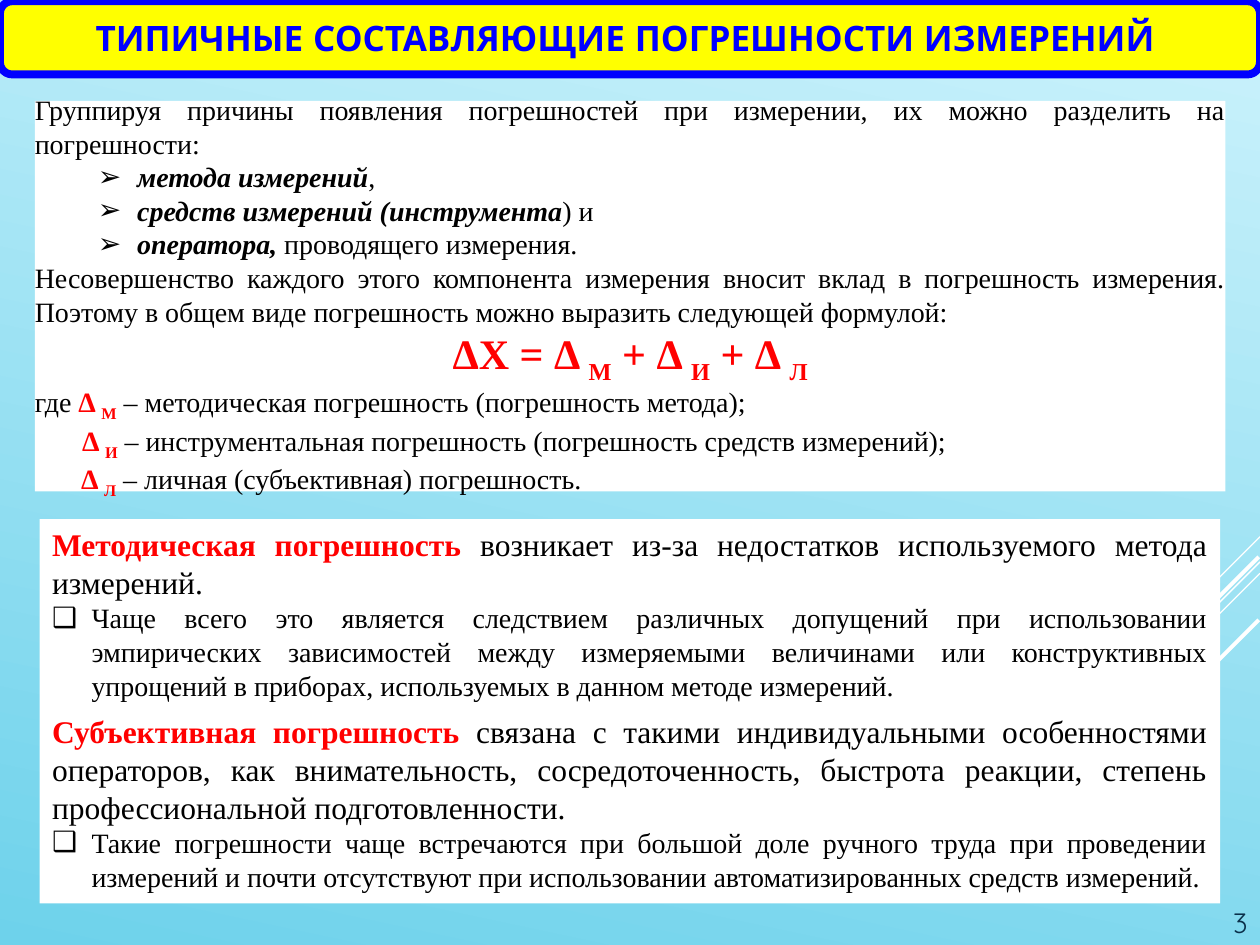
"""Build the slide on the typical components of measurement error."""
from dataclasses import dataclass

from lxml.etree import SubElement
from pptx import Presentation
from pptx.dml.color import RGBColor as RGB
from pptx.enum.shapes import MSO_CONNECTOR as Connector, MSO_SHAPE as Shape
from pptx.enum.text import MSO_ANCHOR as Anchor, MSO_AUTO_SIZE as AutoSize, PP_ALIGN as Align
from pptx.oxml.ns import qn
from pptx.util import Pt


@dataclass(frozen=True)
class Theme:
    head: str = "Quicksand"
    body: str = "Times New Roman"
    black: str = "000000"
    white: str = "FFFFFF"
    red: str = "FF0000"
    blue: str = "0000FF"
    yellow: str = "FFFF00"
    navy: str = "0A304A"
    sky: tuple = ("C8F1FB", "6ED2EB")
    title: int = 20
    formula: int = 24
    lead: int = 18
    text: int = 16


T = Theme()


def add_run(p, text, size=T.text, color=T.black, font=T.body, bold=False, italic=False, sub=False):
    r = p.add_run()
    r.text = text
    r.font.name, r.font.size = font, Pt(size)
    r.font.bold, r.font.italic = bold, italic
    r.font.color.rgb = RGB.from_string(color)
    if sub:
        r._r.get_or_add_rPr().set("baseline", "-25000")


def add_par(tf, runs, align=Align.JUSTIFY, left=0, indent=0, bullet=None, before=0):
    p = tf.paragraphs[0] if not tf.paragraphs[0].runs else tf.add_paragraph()
    p.alignment, p.space_before = align, Pt(before)
    pPr = p._p.get_or_add_pPr()
    pPr.set("marL", str(Pt(left)))
    pPr.set("indent", str(Pt(indent)))
    if bullet:
        SubElement(pPr, qn("a:buChar")).set("char", bullet)
    else:
        SubElement(pPr, qn("a:buNone"))
    for text, style in runs:
        add_run(p, text, **style)


prs = Presentation()
prs.slide_width, prs.slide_height = Pt(720), Pt(540)
s = prs.slides.add_slide(prs.slide_layouts[3])
title, causes, kinds = s.placeholders

fill = s.background.fill
fill.gradient()
fill.gradient_angle = 258
for stop, color, position in zip(fill.gradient_stops, T.sky, (0.04, 1)):
    stop.color.rgb, stop.position = RGB.from_string(color), position

rays = [(720, 306.7, 59.8, 0.75), (720, 321.1, 194.4, 0.75), (720, 327.6, 123.8, 0.75),
        (719.3, 318.2, 113, 2.25), (719.3, 354.2, 82.1, 2.25)]
for i, (x, y, run, width) in enumerate(rays):
    ray = s.shapes.add_connector(Connector.STRAIGHT, Pt(x), Pt(y), Pt(x - run), Pt(y + run))
    ray.line.color.rgb, ray.line.width = RGB.from_string(T.white), Pt(width)
    SubElement(ray._element.spPr, qn("a:effectLst"))
    s.shapes.element.insert(2 + i, ray._element)

title_box = (0, 0.7, 720, 41.8)
banner = s.shapes.add_shape(Shape.ROUNDED_RECTANGLE, *map(Pt, title_box))
banner.shadow.inherit = False
banner.fill.solid()
banner.fill.fore_color.rgb = RGB.from_string(T.yellow)
banner.line.color.rgb, banner.line.width = RGB.from_string(T.blue), Pt(4.5)
s.shapes.element.insert(2 + len(rays), banner._element)

boxes = [(title, title_box, None, Anchor.MIDDLE),
         (causes, (19.9, 57.6, 680.4, 223.2), T.white, Anchor.MIDDLE),
         (kinds, (22.6, 296.6, 674.6, 219.6), T.white, Anchor.TOP)]
for sp, box, color, anchor in boxes:
    sp.left, sp.top, sp.width, sp.height = map(Pt, box)
    if color:
        sp.fill.solid()
        sp.fill.fore_color.rgb = RGB.from_string(color)
    tf = sp.text_frame
    tf.word_wrap, tf.auto_size, tf.vertical_anchor = True, AutoSize.NONE, anchor

p = title.text_frame.paragraphs[0]
p.alignment = Align.CENTER
add_run(p, "ТИПИЧНЫЕ СОСТАВЛЯЮЩИЕ ПОГРЕШНОСТИ ИЗМЕРЕНИЙ ", T.title, T.blue, T.head, bold=True)

plain, strong = {}, {"bold": True, "italic": True}
symbol = {"color": T.red, "bold": True}
index = symbol | {"sub": True}
big, big_index = symbol | {"size": T.formula}, index | {"size": T.formula}
lead, lead_term = {"size": T.lead}, symbol | {"size": T.lead}

tf = causes.text_frame
tf.margin_left = tf.margin_top = tf.margin_right = tf.margin_bottom = 0
add_par(tf, [("Группируя причины появления погрешностей при измерении, их можно разделить на погрешности:", plain)])
for term, rest in [("метода измерений", ", "), ("средств измерений (инструмента", ") и "),
                   ("оператора,", " проводящего измерения. ")]:
    add_par(tf, [(term, strong), (rest, plain)], left=58.5, indent=-22.5, bullet="➢")
add_par(tf, [("Несовершенство каждого этого компонента измерения вносит вклад в погрешность измерения. "
              "Поэтому в общем виде погрешность можно выразить следующей формулой:", plain)])
add_par(tf, [("ΔX = Δ ", big), ("M", big_index), (" + Δ ", big), ("И", big_index),
             (" + Δ ", big), ("Л", big_index)], Align.CENTER)
for intro, letter, meaning, indent in [
        ("где ", "M", "методическая погрешность (погрешность метода);", 0),
        ("", "И", "инструментальная погрешность (погрешность средств измерений);", 27),
        ("", "Л", "личная (субъективная) погрешность.", 26.5)]:
    start = [(intro, plain)] if intro else []
    add_par(tf, start + [("Δ ", symbol), (letter, index), (f" – {meaning}", plain)],
            Align.LEFT, indent=indent)

for term, rest, detail, before in [
        ("Методическая погрешность ", "возникает из-за недостатков используемого метода измерений. ",
         "Чаще всего это является следствием различных допущений при использовании эмпирических "
         "зависимостей между измеряемыми величинами или конструктивных упрощений в приборах, "
         "используемых в данном методе измерений.", 0),
        ("Субъективная погрешность ", "связана с такими индивидуальными особенностями операторов, "
         "как внимательность, сосредоточенность, быстрота реакции, степень профессиональной "
         "подготовленности. ",
         "Такие погрешности чаще встречаются при большой доле ручного труда при проведении измерений "
         "и почти отсутствуют при использовании автоматизированных средств измерений.", 6)]:
    add_par(kinds.text_frame, [(term, lead_term), (rest, lead)], before=before)
    add_par(kinds.text_frame, [(detail, plain)], left=22.5, indent=-22.5, bullet="❑")

number = s.shapes.add_textbox(Pt(652.3), Pt(487.4), Pt(67.7), Pt(52.6))
tf = number.text_frame
tf.word_wrap, tf.vertical_anchor = True, Anchor.BOTTOM
tf.paragraphs[0].alignment = Align.RIGHT
add_run(tf.paragraphs[0], "3", T.text, T.navy, T.head)

prs.save("out.pptx")
